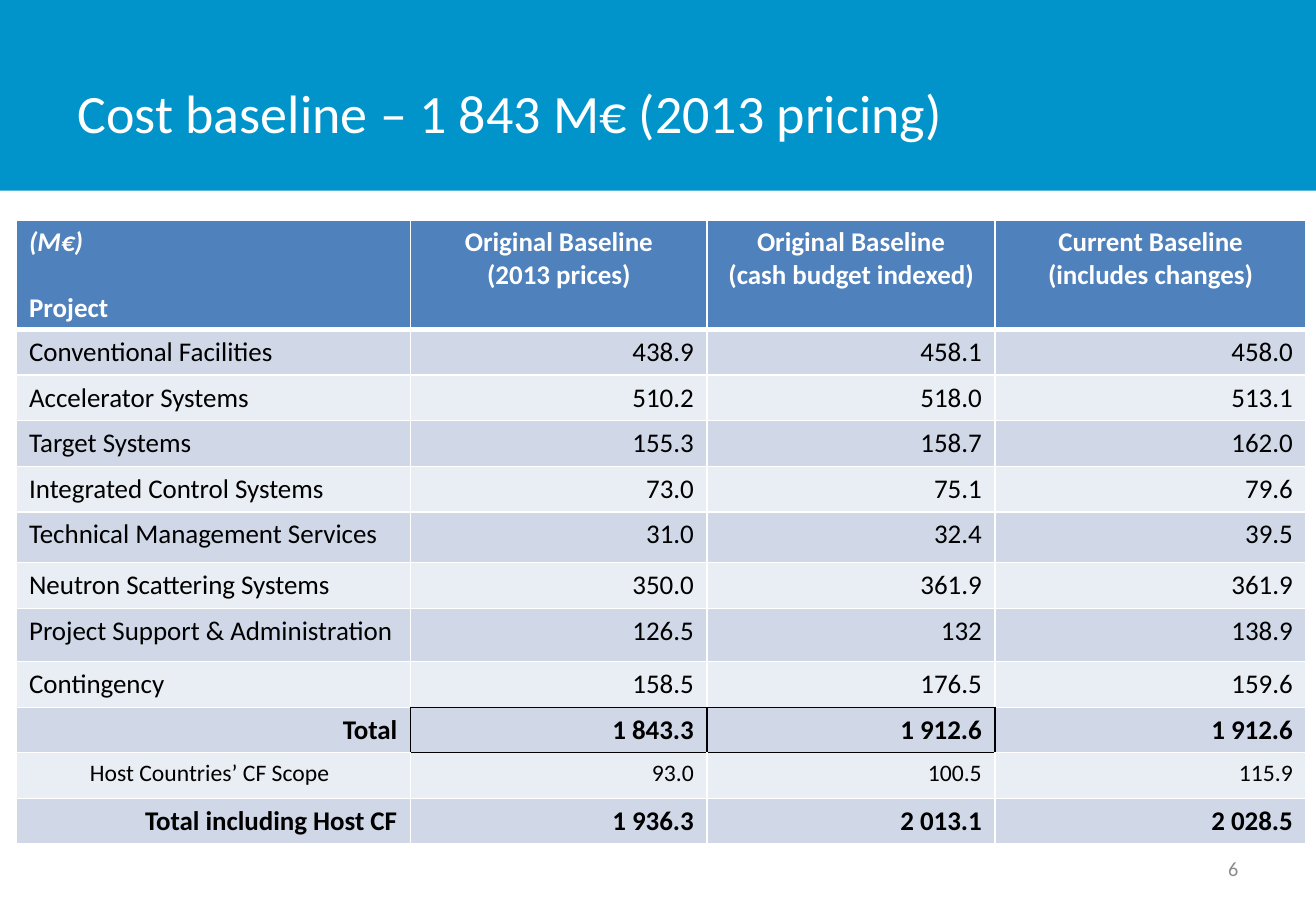
"""Build the cost baseline slide with its budget table."""
from lxml import etree
from pptx import Presentation
from pptx import util as u
from pptx.dml.color import RGBColor
from pptx.enum import shapes, text
from pptx.oxml.ns import qn

WHITE = RGBColor(0xFF, 0xFF, 0xFF)
BLACK = RGBColor(0x00, 0x00, 0x00)
GREY = RGBColor(0x8C, 0x8C, 0x8C)
BAND = RGBColor(0x00, 0x94, 0xCA)
HEAD = RGBColor(0x4F, 0x81, 0xBD)
DARK = RGBColor(0xD0, 0xD8, 0xE8)
LIGHT = RGBColor(0xE9, 0xED, 0xF4)
LEFT, MID, RIGHT = text.PP_ALIGN.LEFT, text.PP_ALIGN.CENTER, text.PP_ALIGN.RIGHT


def style(run, size, color, bold=False):
    """Set the font of one run."""
    font = run.font
    font.name, font.size, font.bold = "Calibri", u.Pt(size), bold
    font.color.rgb = color


def edge(cell, side, color, width):
    """Draw one border of a table cell."""
    line = etree.SubElement(cell._tc.get_or_add_tcPr(), qn("a:ln" + side), w=str(u.Pt(width)))
    fill = etree.SubElement(line, qn("a:solidFill"))
    etree.SubElement(fill, qn("a:srgbClr"), val=str(color))


deck = Presentation()
deck.slide_width, deck.slide_height = u.Inches(10.83), u.Inches(7.5)
slide = deck.slides.add_slide(deck.slide_layouts[6])

band = slide.shapes.add_shape(
    shapes.MSO_SHAPE.RECTANGLE, 0, 0, deck.slide_width, u.Inches(1.57))
band.shadow.inherit = False
band.fill.solid()
band.fill.fore_color.rgb = BAND
band.line.fill.background()

labels = [
    ("Cost baseline – 1 843 M€ (2013 pricing)", (0.54, 0.3, 8.46, 1.25), 32, WHITE, LEFT),
    ("6", (7.76, 6.95, 2.53, 0.4), 12, GREY, RIGHT),
]
for words, place, size, color, align in labels:
    frame = slide.shapes.add_textbox(*map(u.Inches, place)).text_frame
    frame.word_wrap = True
    frame.vertical_anchor = text.MSO_ANCHOR.MIDDLE
    frame.text = words
    frame.paragraphs[0].alignment = align
    style(frame.paragraphs[0].runs[0], size, color)

rows = [
    ("(M€)\nProject", "Original Baseline\n(2013 prices)",
     "Original Baseline\n(cash budget indexed)", "Current Baseline (includes changes)"),
    ("Conventional Facilities", "438.9", "458.1", "458.0"),
    ("Accelerator Systems", "510.2", "518.0", "513.1"),
    ("Target Systems", "155.3", "158.7", "162.0"),
    ("Integrated Control Systems", "73.0", "75.1", "79.6"),
    ("Technical Management Services", "31.0", "32.4", "39.5"),
    ("Neutron Scattering Systems", "350.0", "361.9", "361.9"),
    ("Project Support & Administration", "126.5", "132", "138.9"),
    ("Contingency", "158.5", "176.5", "159.6"),
    ("Total", "1 843.3", "1 912.6", "1 912.6"),
    ("Host Countries’ CF Scope", "93.0", "100.5", "115.9"),
    ("Total including Host CF", "1 936.3", "2 013.1", "2 028.5"),
]
widths = [3.25, 2.44, 2.37, 2.56]
heights = {0: 0.9, 5: 0.42, 7: 0.44}
totals, host = (9, 11), 10
boxed = {(9, 1), (9, 2)}
sides = {"L": (0, -1), "R": (0, 1), "T": (-1, 0), "B": (1, 0)}

table = slide.shapes.add_table(
    len(rows), len(widths), u.Inches(0.13), u.Inches(1.81),
    u.Inches(sum(widths)), u.Inches(5.14)).table
for col, width in zip(table.columns, widths):
    col.width = u.Inches(width)

for r, row in enumerate(rows):
    table.rows[r].height = u.Inches(heights.get(r, 0.375))
    for c, words in enumerate(row):
        cell = table.cell(r, c)
        cell.margin_left = cell.margin_right = u.Inches(0.11)
        for side, (down, over) in sides.items():
            ruled = boxed & {(r, c), (r + down, c + over)}
            thick = (r, side) in ((0, "B"), (1, "T"))
            edge(cell, side, BLACK if ruled else WHITE, 3 if thick else 1)
        cell.fill.solid()
        cell.fill.fore_color.rgb = HEAD if r == 0 else DARK if r % 2 else LIGHT
        cell.text = words
        for para in cell.text_frame.paragraphs:
            if r == 0:
                para.alignment = MID if c else LEFT
            else:
                para.alignment = RIGHT if c or r in totals else LEFT
            style(para.runs[0], 14 if r == host else 16,
                  BLACK if r else WHITE, r == 0 or r in totals)

unit, name = table.cell(0, 0).text_frame.paragraphs
unit.runs[0].font.italic = True
name.space_before = u.Pt(19.5)
scope = table.cell(host, 0).text_frame.paragraphs[0]
scope._p.get_or_add_pPr().set("marL", str(u.Inches(0.5)))

deck.save("out.pptx")
